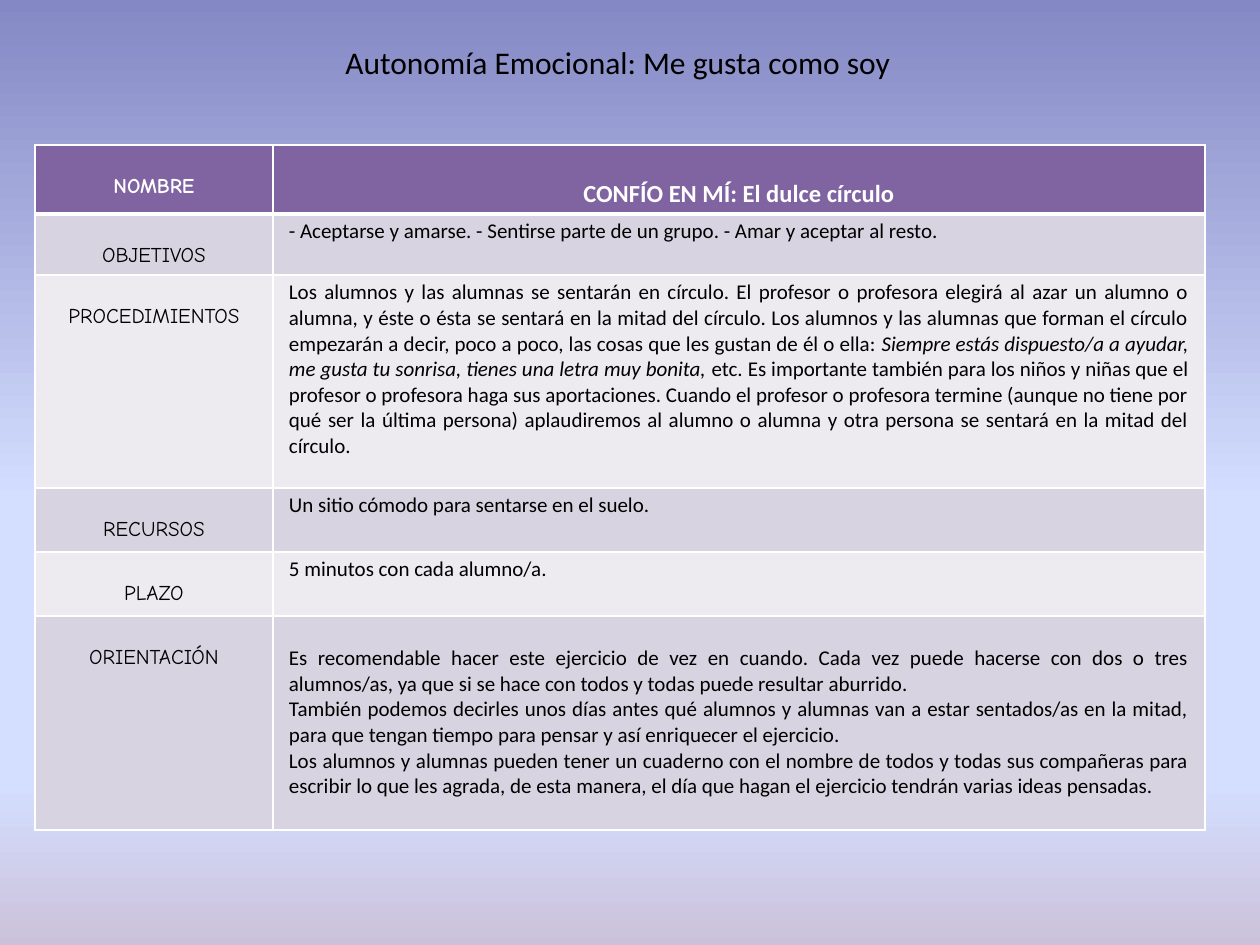
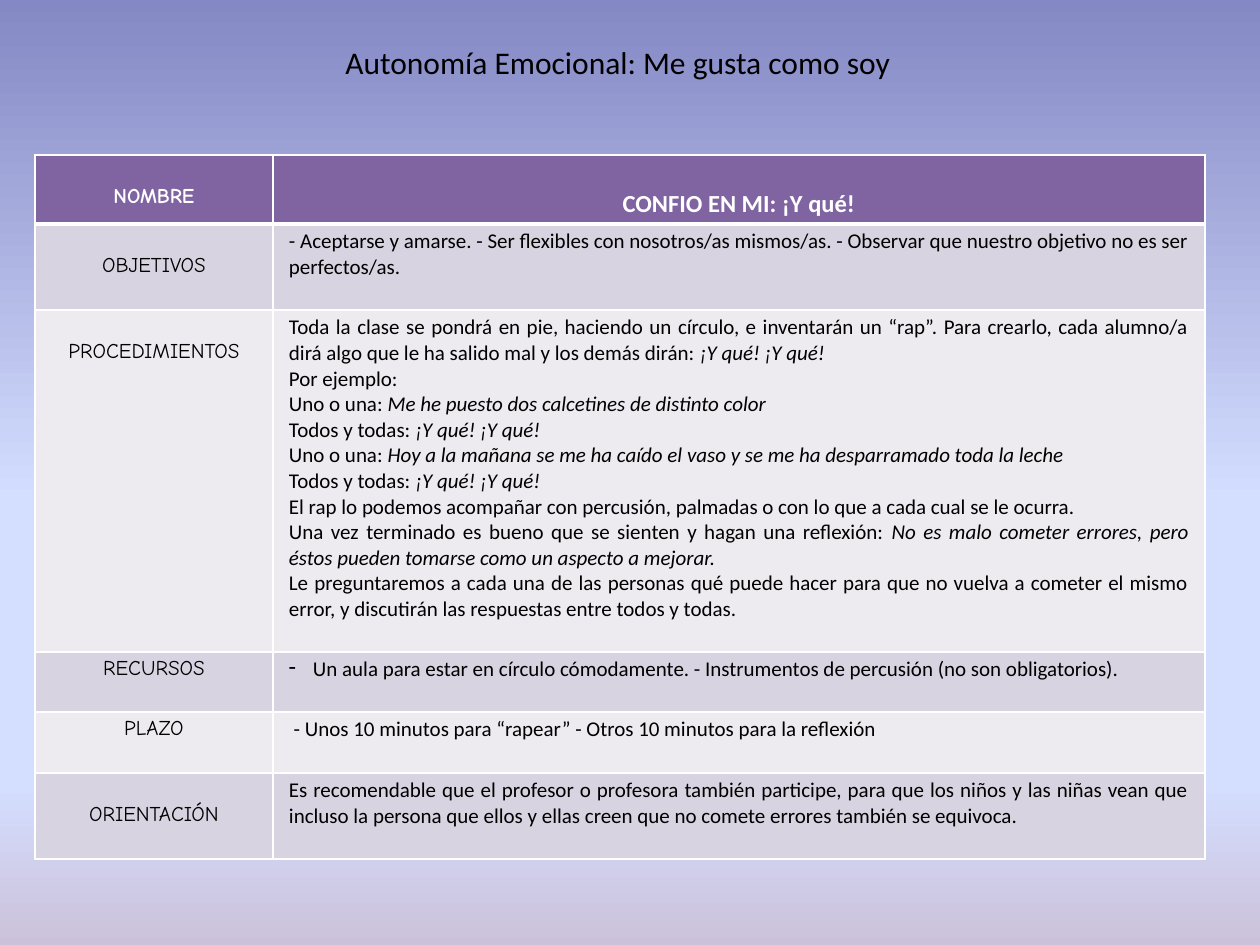
from pptx import Presentation
from pptx.dml.color import RGBColor
from pptx.enum.text import MSO_AUTO_SIZE, PP_ALIGN
from pptx.oxml.ns import qn
from pptx.util import Emu, Pt
from lxml.etree import SubElement

# Content: each row is label, paragraphs, height; *stars* enclose italics
TITLE = "Autonomía Emocional: Me gusta como soy"
CHORUS = "Todos y todas: *¡Y qué! ¡Y qué!*"
ACTIVITIES = [
    {
        "top": 145,
        "rows": [
            ("NOMBRE", ["CONFÍO EN MÍ: El dulce círculo"], 69),
            ("OBJETIVOS", [
                "- Aceptarse y amarse. - Sentirse parte de un grupo. - Amar y aceptar al resto.",
            ], 61),
            ("PROCEDIMIENTOS", [
                "Los alumnos y las alumnas se sentarán en círculo. El profesor o profesora elegirá "
                "al azar un alumno o alumna, y éste o ésta se sentará en la mitad del círculo. Los "
                "alumnos y las alumnas que forman el círculo empezarán a decir, poco a poco, las "
                "cosas que les gustan de él o ella: *Siempre estás dispuesto/a a ayudar, me gusta "
                "tu sonrisa, tienes una letra muy bonita, *etc. Es importante también para los "
                "niños y niñas que el profesor o profesora haga sus aportaciones. Cuando el "
                "profesor o profesora termine (aunque no tiene por qué ser la última persona) "
                "aplaudiremos al alumno o alumna y otra persona se sentará en la mitad del círculo.",
            ], 213),
            ("RECURSOS", ["Un sitio cómodo para sentarse en el suelo."], 64),
            ("PLAZO", ["5 minutos con cada alumno/a."], 64),
            ("ORIENTACIÓN", [
                "Es recomendable hacer este ejercicio de vez en cuando. Cada vez puede hacerse con "
                "dos o tres alumnos/as, ya que si se hace con todos y todas puede resultar aburrido.",
                "También podemos decirles unos días antes qué alumnos y alumnas van a estar "
                "sentados/as en la mitad, para que tengan tiempo para pensar y así enriquecer el "
                "ejercicio.",
                "Los alumnos y alumnas pueden tener un cuaderno con el nombre de todos y todas sus "
                "compañeras para escribir lo que les agrada, de esta manera, el día que hagan el "
                "ejercicio tendrán varias ideas pensadas.",
            ], 214),
        ],
        "raised_labels": [],
        "lowered_texts": ["ORIENTACIÓN"],
        "bulleted": [],
    },
    {
        "top": 155,
        "rows": [
            ("NOMBRE", ["CONFIO EN MI: ¡Y qué!"], 69),
            ("OBJETIVOS", [
                "- Aceptarse y amarse. - Ser flexibles con nosotros/as mismos/as. - Observar que "
                "nuestro objetivo no es ser perfectos/as.",
            ], 86),
            ("PROCEDIMIENTOS", [
                "Toda la clase se pondrá en pie, haciendo un círculo, e inventarán un “rap”. Para "
                "crearlo, cada alumno/a dirá algo que le ha salido mal y los demás dirán: "
                "*¡Y qué! ¡Y qué!*",
                "Por ejemplo:",
                "Uno o una: *Me he puesto dos calcetines de distinto color*",
                CHORUS,
                "Uno o una: *Hoy a la mañana se me ha caído el vaso y se me ha desparramado toda "
                "la leche*",
                CHORUS,
                "El rap lo podemos acompañar con percusión, palmadas o con lo que a cada cual se "
                "le ocurra.",
                "Una vez terminado es bueno que se sienten y hagan una reflexión: *No es malo "
                "cometer errores, pero éstos pueden tomarse como un aspecto a mejorar.*",
                "Le preguntaremos a cada una de las personas qué puede hacer para que no vuelva a "
                "cometer el mismo error, y discutirán las respuestas entre todos y todas.",
            ], 342),
            ("RECURSOS", [
                "Un aula para estar en círculo cómodamente. - Instrumentos de percusión (no son "
                "obligatorios).",
            ], 60),
            ("PLAZO", [
                " - Unos 10 minutos para “rapear” - Otros 10 minutos para la reflexión",
            ], 61),
            ("ORIENTACIÓN", [
                "Es recomendable que el profesor o profesora también participe, para que los niños "
                "y las niñas vean que incluso la persona que ellos y ellas creen que no comete "
                "errores también se equivoca.",
            ], 86),
        ],
        "raised_labels": ["RECURSOS", "PLAZO"],
        "lowered_texts": [],
        "bulleted": ["RECURSOS"],
    },
]

# Shared look
COLORS = {"header": "8064A2", "odd": "D8D3E0", "even": "EDEAF0",
          "white": "FFFFFF", "black": "000000"}
SKY = [(0, "8488C4"), (53, "D4DEFF"), (83, "D4DEFF"), (100, "CCC1DA")]
LABEL_FONT, TEXT_FONT = "Comic Neue", "Calibri"
TABLE_LEFT, COLUMNS = 35, (238, 932)
SIDE_MARGIN, EDGE_MARGIN, LOWERED_MARGIN, HEADING_MARGIN = 16, 5, 30, 34
BULLET_INDENT = 24


def px(count):
    return Emu(round(count * 914400 / 126))


def color(name):
    return RGBColor.from_string(COLORS[name])


def paint_background(master):
    fill = master.background.fill
    fill.gradient()
    fill.gradient_angle = 270
    stops = master.element.find(".//" + qn("a:gsLst"))
    for stop in list(stops):
        stops.remove(stop)
    for percent, shade in SKY:
        stop = SubElement(stops, qn("a:gs"), pos=str(percent * 1000))
        SubElement(stop, qn("a:srgbClr"), val=shade)


def set_font(font, name, size, ink, bold=False):
    font.name, font.size, font.bold = name, Pt(size), bold
    font.color.rgb = color(ink)


def add_borders(cell, bottom_width):
    properties = cell._tc.get_or_add_tcPr()
    for side, width in (("L", 1), ("R", 1), ("T", 1), ("B", bottom_width)):
        line = SubElement(properties, qn("a:ln" + side), w=str(Pt(width)))
        solid = SubElement(line, qn("a:solidFill"))
        SubElement(solid, qn("a:srgbClr"), val=COLORS["white"])


def add_bullet(para):
    properties = para._p.get_or_add_pPr()
    properties.set("marL", str(px(BULLET_INDENT)))
    properties.set("indent", str(-px(BULLET_INDENT)))
    SubElement(properties, qn("a:buChar"), char="-")


def style_cell(cell, row_index, top_margin):
    cell.margin_left = cell.margin_right = px(SIDE_MARGIN)
    cell.margin_top, cell.margin_bottom = px(top_margin), px(EDGE_MARGIN)
    add_borders(cell, 1 if row_index else 3)
    band = "odd" if row_index % 2 else "even"
    cell.fill.solid()
    cell.fill.fore_color.rgb = color(band if row_index else "header")


def write(cell, texts, align, font, size, ink, bold=False):
    frame = cell.text_frame
    for index, text in enumerate(texts):
        para = frame.add_paragraph() if index else frame.paragraphs[0]
        para.alignment = align
        set_font(para.font, font, size, ink, bold)
        for part, piece in enumerate(text.split("*")):
            if piece:
                span = para.add_run()
                span.text = piece
                set_font(span.font, font, size, ink, bold)
                span.font.italic = part % 2 == 1


def add_title(page):
    box = page.shapes.add_textbox(px(333), px(37), px(615), px(50))
    frame = box.text_frame
    frame.word_wrap = True
    frame.auto_size = MSO_AUTO_SIZE.SHAPE_TO_FIT_TEXT
    para = frame.paragraphs[0]
    para.text = TITLE
    set_font(para.font, TEXT_FONT, 18, "black")


def add_activity(page, activity):
    rows = activity["rows"]
    table = page.shapes.add_table(
        len(rows), len(COLUMNS), px(TABLE_LEFT), px(activity["top"]),
        px(sum(COLUMNS)), px(sum(height for _, _, height in rows))).table
    table.horz_banding = False
    for column, width in zip(table.columns, COLUMNS):
        column.width = px(width)

    for index, (label, texts, height) in enumerate(rows):
        table.rows[index].height = px(height)
        heading = index == 0
        ink = "white" if heading else "black"

        # Label on the left
        label_cell = table.cell(index, 0)
        raised = label in activity["raised_labels"]
        style_cell(label_cell, index, EDGE_MARGIN if raised else LOWERED_MARGIN)
        write(label_cell, [label], PP_ALIGN.CENTER, LABEL_FONT, 12, ink, heading)

        # Text on the right
        text_cell = table.cell(index, 1)
        lowered = label in activity["lowered_texts"]
        margin = LOWERED_MARGIN if lowered else EDGE_MARGIN
        style_cell(text_cell, index, HEADING_MARGIN if heading else margin)
        align = PP_ALIGN.CENTER if heading else PP_ALIGN.JUSTIFY
        write(text_cell, texts, align, TEXT_FONT, 14 if heading else 12, ink, heading)
        if label in activity["bulleted"]:
            add_bullet(text_cell.text_frame.paragraphs[0])


def main():
    deck = Presentation()
    deck.slide_width, deck.slide_height = px(1260), px(945)
    paint_background(deck.slide_master)
    for activity in ACTIVITIES:
        page = deck.slides.add_slide(deck.slide_layouts[6])
        add_activity(page, activity)
        add_title(page)
    deck.save("out.pptx")


if __name__ == "__main__":
    main()
